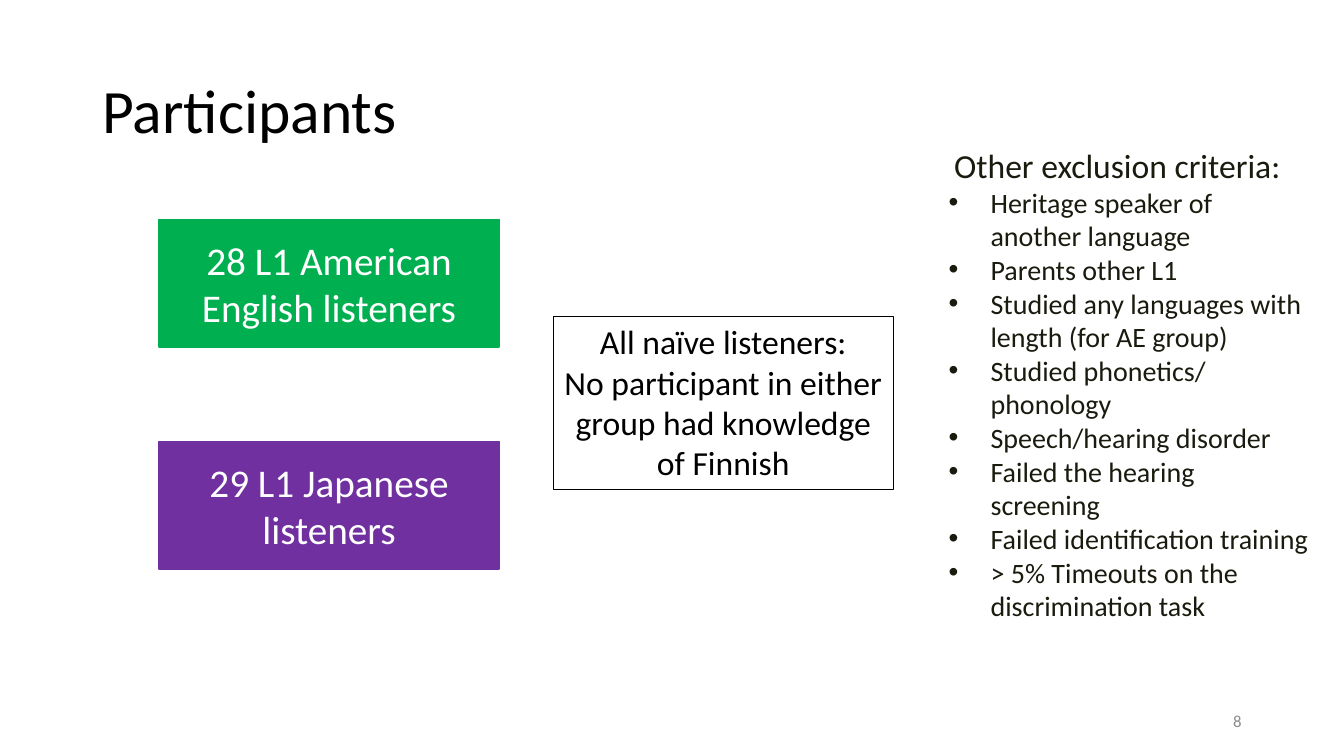
from lxml.etree import SubElement
from pptx import Presentation
from pptx.dml.color import RGBColor
from pptx.enum.shapes import MSO_SHAPE
from pptx.enum.text import MSO_ANCHOR, MSO_AUTO_SIZE, PP_ALIGN
from pptx.oxml.ns import qn
from pptx.util import Pt

FONT = "Calibri"
GROUPS = [("28 L1 American English listeners", "00B050"),
          ("29 L1 Japanese listeners", "7030A0")]
NAIVE = ["All naïve listeners:",
         "No participant in either group had knowledge of Finnish"]
CRITERIA = ["Heritage speaker of another language",
            "Parents other L1",
            "Studied any languages with length (for AE group)",
            "Studied phonetics/ phonology",
            "Speech/hearing disorder",
            "Failed the hearing screening",
            "Failed identification training",
            "> 5% Timeouts on the discrimination task"]


def rgb(color):
    return RGBColor.from_string(color)


def write(p, text, size=24, color="000000", align=PP_ALIGN.LEFT,
          spacing=None, margin=0, indent=0, bullet=None):
    """Fill a paragraph with one formatted run."""
    p.alignment = align
    p.line_spacing = spacing
    r = p.add_run()
    r.text = text
    r.font.name = FONT
    r.font.size = Pt(size)
    r.font.color.rgb = rgb(color)
    pPr = p._p.get_or_add_pPr()
    pPr.set("marL", str(Pt(margin)))
    pPr.set("indent", str(Pt(indent)))
    if bullet:
        SubElement(pPr, qn("a:buFont")).set("typeface", "Arial")
        SubElement(pPr, qn("a:buChar")).set("char", bullet)
    return r


def next_paragraph(tf, i):
    return tf.paragraphs[0] if i == 0 else tf.add_paragraph()


def add_title(s, text, x, y, w, h):
    sp = s.shapes.title
    sp.left, sp.top, sp.width, sp.height = Pt(x), Pt(y), Pt(w), Pt(h)
    tf = sp.text_frame
    tf.auto_size = MSO_AUTO_SIZE.NONE
    tf.vertical_anchor = MSO_ANCHOR.MIDDLE
    write(tf.paragraphs[0], text, size=44, spacing=0.9)


def add_box(s, lines, x, y, w, h, size, color, line, line_width, fill=None,
            anchor=MSO_ANCHOR.MIDDLE):
    """Rectangle with centred lines of text."""
    sp = s.shapes.add_shape(MSO_SHAPE.RECTANGLE, Pt(x), Pt(y), Pt(w), Pt(h))
    sp.shadow.inherit = False
    if fill:
        sp.fill.solid()
        sp.fill.fore_color.rgb = rgb(fill)
    else:
        sp.fill.background()
    sp.line.color.rgb = rgb(line)
    sp.line.width = Pt(line_width)
    tf = sp.text_frame
    tf.word_wrap = True
    tf.vertical_anchor = anchor
    for i, text in enumerate(lines):
        write(next_paragraph(tf, i), text, size=size, color=color,
              align=PP_ALIGN.CENTER)


def add_groups(s, x, y, w, h, box_h=91):
    """Listener groups, spread evenly down the given box."""
    step = (h - box_h) / (len(GROUPS) - 1)
    for i, (text, color) in enumerate(GROUPS):
        add_box(s, [text], x, y + i * step, w, box_h, size=28,
                color="FFFFFF", line=color, line_width=1, fill=color)


def add_criteria(s, x, y, w, h):
    tf = s.shapes.add_textbox(Pt(x), Pt(y), Pt(w), Pt(h)).text_frame
    tf.word_wrap = True
    write(tf.paragraphs[0], "Other exclusion criteria:", color="191B0E",
          margin=58, indent=-30)
    for text in CRITERIA:
        write(tf.add_paragraph(), text, size=20, color="191B0E",
              margin=54, indent=-30, bullet="•")


def add_slide_number(s, number, x, y, w, h):
    tf = s.shapes.add_textbox(Pt(x), Pt(y), Pt(w), Pt(h)).text_frame
    tf.word_wrap = True
    tf.vertical_anchor = MSO_ANCHOR.MIDDLE
    write(tf.paragraphs[0], number, size=12, color="8C8C8C",
          align=PP_ALIGN.RIGHT)


def main():
    prs = Presentation()
    prs.slide_width, prs.slide_height = Pt(960), Pt(540)
    s = prs.slides.add_slide(prs.slide_layouts[5])
    add_title(s, "Participants", 66, 29, 828, 104)
    add_criteria(s, 646.5, 100, 296, 376)
    add_groups(s, 113.5, 157, 243, 249.5)
    # Shared condition for both groups
    add_box(s, NAIVE, 395.3, 226, 242.7, 124, size=24, color="000000",
            line="000000", line_width=0.75, anchor=MSO_ANCHOR.TOP)
    add_slide_number(s, "8", 678, 500.5, 216, 29)
    prs.save("out.pptx")


if __name__ == "__main__":
    main()
